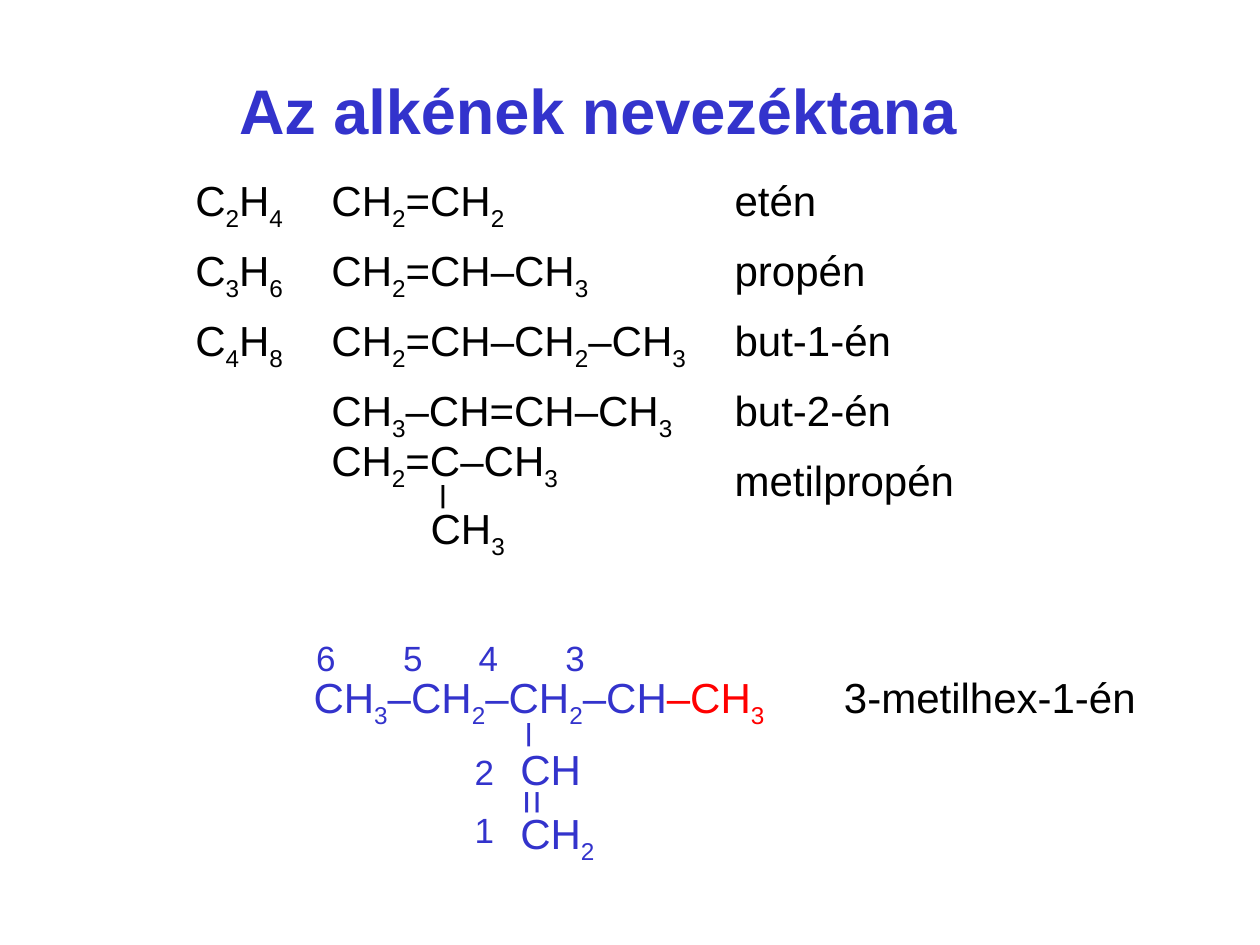
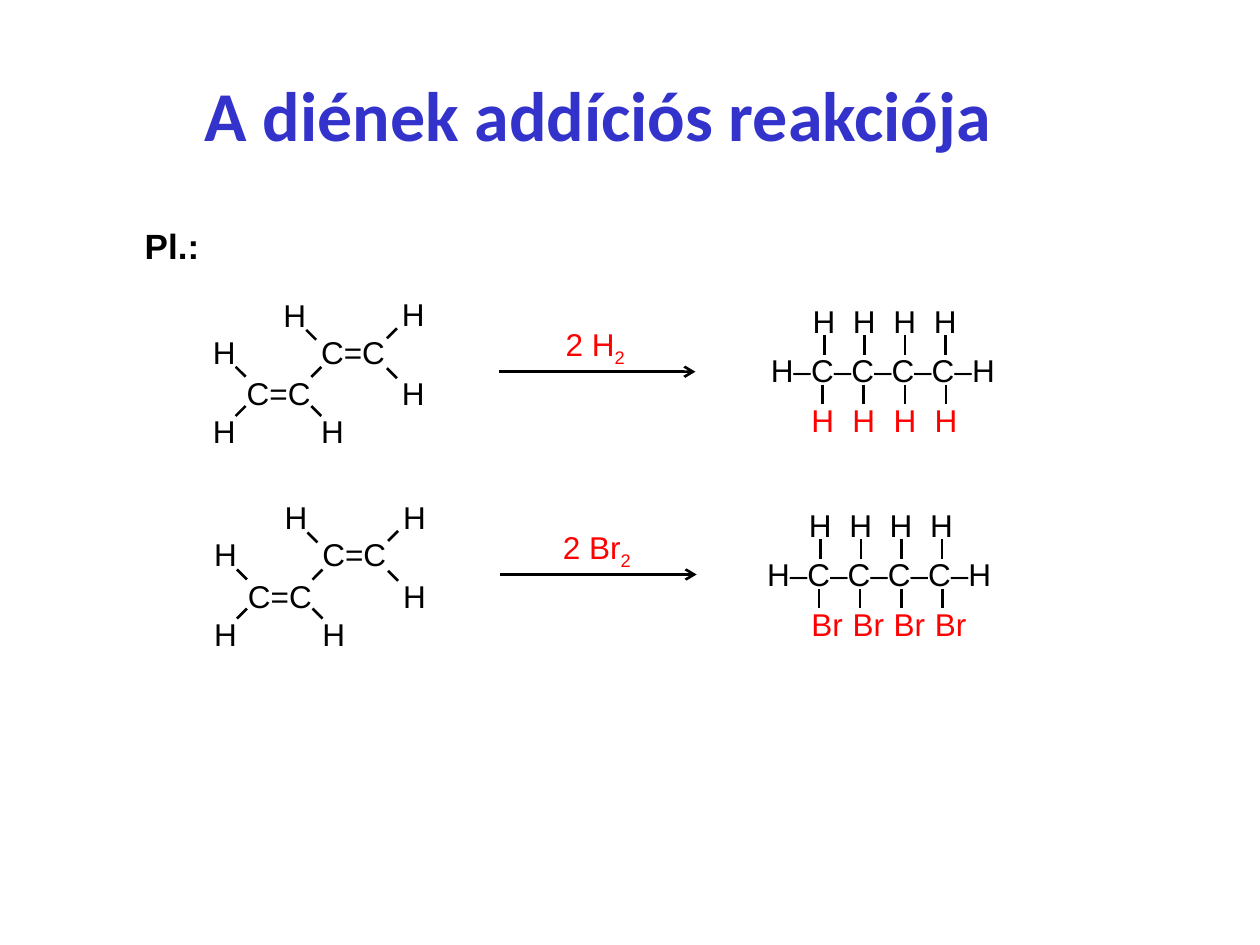
from pptx import Presentation
from pptx.dml.color import RGBColor
from pptx.enum.shapes import MSO_CONNECTOR
from pptx.enum.text import MSO_AUTO_SIZE, PP_ALIGN
from pptx.oxml.ns import qn
from pptx.util import Pt
from lxml.etree import SubElement

BLUE = RGBColor(0x33, 0x33, 0xCC)
RED = RGBColor(0xFF, 0x00, 0x00)
BLACK = RGBColor(0x00, 0x00, 0x00)

# In formulas, "_" lowers the character after it.
ALKENES = [
    ("C_2H_4", "CH_2=CH_2", "etén"),
    ("C_3H_6", "CH_2=CH–CH_3", "propén"),
    ("C_4H_8", "CH_2=CH–CH_2–CH_3", "but-1-én"),
    ("", "CH_3–CH=CH–CH_3", "but-2-én"),
    ("", "", "metilpropén"),
]
COLUMN_WIDTHS = (77.8, 230.4, 187.9)
ROW_HEIGHT = 40

# text, left, top, width, rotation
METHYLPROPENE = [
    ("–", 242.6, 266.4, 28, 90),
    ("CH_3", 239, 283.7, 58.3, 0),
    ("CH_2=C–CH_3", 182.2, 244.8, 147.6, 0),
]
METHYLHEXENE = [
    ("–", 291.6, 402.5, 28, 90),
    ("CH", 290.2, 421.2, 49.7, 0),
    (" =", 288, 437.8, 35.3, 90),
    ("CH_2", 290.2, 457.9, 58.3, 0),
]
MAIN_CHAIN = [("CH_3–CH_2–CH_2–CH", BLUE), ("–CH_3", RED)]
CARBON_NUMBERS = [
    ("1", 264.2, 458.6), ("2", 264.2, 425.5), ("3", 316, 360),
    ("4", 266.4, 360), ("5", 223.2, 360), ("6", 173.5, 360),
]

# Diene parts, measured from its top left corner
DIENE_ATOMS = [
    ("H", 0, 67), ("H", 0, 21.6), ("H", 61.9, 67),
    ("H", 40.3, 0.5), ("H", 108, 45.4), ("H", 108, 0),
    ("C=C", 19.4, 45.4), ("C=C", 61.9, 21.6),
]
ATOM_WIDTHS = {"H": 27.4, "C=C": 51.1, "Br": 32.4}
DIAGONAL = 5.7
DIENE_BONDS = [  # left, start height, direction (1 falls, -1 rises)
    (20.2, 72.7, -1), (20.2, 44.6, 1), (63.4, 50.4, -1), (63.4, 67, 1),
    (60.5, 23.5, 1), (106.6, 28.3, -1), (106.6, 45.4, 1),
]

REACTIONS = [
    dict(diene=(114.5, 165), reagent=("2 H_2", 316.1, 182.2, 49.7),
         arrow=(285.1, 212.4), product=(433.4, 197.3), added="H", added_left=23),
    dict(diene=(115.2, 280.8), reagent=("2 Br_2", 314.6, 298.1, 54.7),
         arrow=(285.8, 328.3), product=(431.3, 313.9), added="Br", added_left=25.2),
]
ARROW_LENGTH = 112.3


def write(p, text, size=24, color=BLACK, font="Arial", bold=False):
    """Add text to a paragraph, lowering each character marked with "_"."""
    first, *rest = text.split("_")
    runs = [(first, False)]
    for part in rest:
        runs += [(part[0], True), (part[1:], False)]
    for piece, lowered in runs:
        if not piece:
            continue
        r = p.add_run()
        r.text = piece
        r.font.size, r.font.name, r.font.bold = Pt(size), font, bold
        r.font.color.rgb = color
        if lowered:
            r.font._element.set("baseline", "-25000")


def add_text(s, text, left, top, width, size=24, color=BLACK, font="Arial",
             bold=False, align=PP_ALIGN.LEFT, wrap=False, rotation=0):
    """Add a text box; text is a string or a list of (string, colour)."""
    sp = s.shapes.add_textbox(Pt(left), Pt(top), Pt(width), Pt(size * 1.2 + 7.2))
    sp.rotation = rotation
    tf = sp.text_frame
    tf.word_wrap = wrap
    tf.auto_size = MSO_AUTO_SIZE.SHAPE_TO_FIT_TEXT
    p = tf.paragraphs[0]
    p.alignment = align
    for part, part_color in [(text, color)] if isinstance(text, str) else text:
        write(p, part, size, part_color, font, bold)


def add_title(s, text, **style):
    add_text(s, text, 20.2, 37.4, 643, color=BLUE, bold=True,
             align=PP_ALIGN.CENTER, wrap=True, **style)


def add_line(s, x1, y1, x2, y2, arrow=False):
    line = s.shapes.add_connector(MSO_CONNECTOR.STRAIGHT, Pt(x1), Pt(y1), Pt(x2), Pt(y2))
    line.line.color.rgb = BLACK
    line.line.width = Pt(1.5)
    if arrow:
        SubElement(line.line._get_or_add_ln(), qn("a:tailEnd"), type="arrow")
    SubElement(line._element.spPr, qn("a:effectLst"))


def add_alkene_table(s):
    frame = s.shapes.add_table(len(ALKENES), len(COLUMN_WIDTHS), Pt(104.4), Pt(98.6),
                               Pt(sum(COLUMN_WIDTHS)), Pt(ROW_HEIGHT * len(ALKENES)))
    table = frame.table
    table.first_row = table.horz_banding = False
    for column, width in zip(table.columns, COLUMN_WIDTHS):
        column.width = Pt(width)
    for row, texts in zip(table.rows, ALKENES):
        row.height = Pt(ROW_HEIGHT)
        for cell, text in zip(row.cells, texts):
            cell.fill.background()
            write(cell.text_frame.paragraphs[0], text)


def add_diene(s, x, y):
    for atom, dx, dy in DIENE_ATOMS:
        add_text(s, atom, x + dx, y + dy, ATOM_WIDTHS[atom], size=18)
    for dx, dy, direction in DIENE_BONDS:
        add_line(s, x + dx, y + dy, x + dx + DIAGONAL, y + dy + direction * DIAGONAL)


def add_product(s, x, y, added, added_left):
    """Draw the saturated chain with the added atoms below it."""
    add_text(s, "H–C–C–C–C–H", x, y, 144, size=18)
    for i in range(4):
        upper, lower = x + 23.1 * i, x + 23.5 * i
        add_line(s, upper + 37.6, y - 5.8, upper + 37.6, y + 5.6)
        add_line(s, lower + 36.7, y + 22.5, lower + 36.7, y + 33.8)
        add_text(s, "H", upper + 23.8, y - 28.1, ATOM_WIDTHS["H"], size=18)
        add_text(s, added, lower + added_left, y + 28.1, ATOM_WIDTHS[added],
                 size=18, color=RED, align=PP_ALIGN.CENTER)


def build_naming(s):
    add_title(s, "Az alkének nevezéktana", size=36)
    add_alkene_table(s)
    for parts, color in ((METHYLPROPENE, BLACK), (METHYLHEXENE, BLUE)):
        for text, left, top, width, rotation in parts:
            add_text(s, text, left, top, width, color=color, rotation=rotation)
    for number, left, top in CARBON_NUMBERS:
        add_text(s, number, left, top, 26, size=20, color=BLUE)
    add_text(s, MAIN_CHAIN, 172.1, 380.2, 280)
    add_text(s, "3-metilhex-1-én", 475.2, 380.2, 182.9)


def build_addition(s):
    add_title(s, "A diének addíciós reakciója", size=40, font="Calibri")
    add_text(s, "Pl.:", 75.6, 124.6, 46, size=20, bold=True)
    for reaction in REACTIONS:
        add_diene(s, *reaction["diene"])
        add_text(s, *reaction["reagent"], size=18, color=RED)
        x, y = reaction["arrow"]
        add_line(s, x, y, x + ARROW_LENGTH, y, arrow=True)
        add_product(s, *reaction["product"], reaction["added"], reaction["added_left"])


def main():
    prs = Presentation()
    prs.slide_width, prs.slide_height = Pt(720), Pt(540)
    for build in (build_naming, build_addition):
        build(prs.slides.add_slide(prs.slide_layouts[6]))
    prs.save("out.pptx")


if __name__ == "__main__":
    main()
